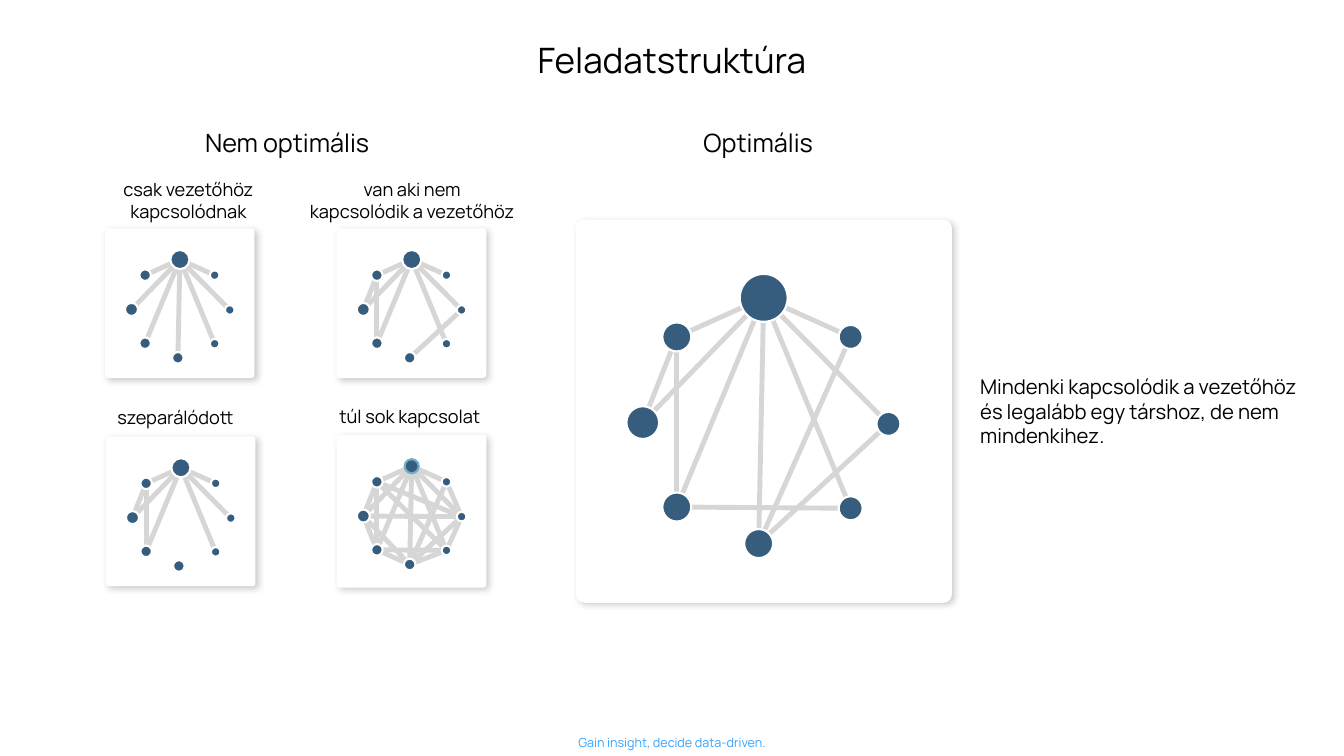
from dataclasses import dataclass

from lxml.etree import SubElement
from pptx import Presentation
from pptx.dml.color import RGBColor
from pptx.enum.shapes import MSO_CONNECTOR, MSO_SHAPE
from pptx.enum.text import MSO_ANCHOR, MSO_AUTO_SIZE, PP_ALIGN
from pptx.oxml.ns import qn
from pptx.util import Inches, Pt

FONT = "Manrope"
WHITE, BLACK, NAVY = "FFFFFF", "000000", "375D7E"
TEAL, GREY, SKY = "6FAEC4", "D6D6D6", "33A3FF"


@dataclass(frozen=True)
class Member:
    x: float
    y: float
    size: float


@dataclass(frozen=True)
class Network:
    left: float
    top: float
    width: float
    height: float
    links: list[tuple[str, str]]
    scale: float = 1
    leader_size: float = 0.38
    leader_outline: str = WHITE


@dataclass(frozen=True)
class Caption:
    text: str
    left: float
    top: float
    width: float
    height: float
    size: float = 26
    color: str = BLACK
    align: PP_ALIGN = PP_ALIGN.CENTER
    margin: float = 0.08
    wrap: bool = False
    anchor: MSO_ANCHOR = MSO_ANCHOR.MIDDLE


# Member centres, measured from the corner of a small card
TEAM = {
    "leader": Member(1.49, 0.62, 0.38),
    "upper left": Member(0.8, 0.93, 0.23),
    "left": Member(0.53, 1.61, 0.26),
    "lower left": Member(0.8, 2.28, 0.23),
    "upper right": Member(2.18, 0.93, 0.19),
    "right": Member(2.48, 1.62, 0.19),
    "lower right": Member(2.18, 2.29, 0.19),
    "bottom": Member(1.45, 2.57, 0.23),
}


def leader_links(*left_out: str) -> list[tuple[str, str]]:
    return [("leader", name) for name in TEAM if name not in ("leader", *left_out)]


# Who is linked to whom
LEFT_PAIRS = [("upper left", "left"), ("upper left", "lower left")]
RIGHT_BOTTOM = [("right", "bottom")]
BALANCED = leader_links() + LEFT_PAIRS + RIGHT_BOTTOM + [
    ("upper right", "bottom"), ("lower left", "lower right")]
CROWDED = BALANCED + [
    ("bottom", "lower left"), ("bottom", "lower right"), ("bottom", "left"),
    ("right", "upper left"), ("right", "upper right"), ("right", "left"),
    ("right", "lower right"), ("lower right", "upper left"), ("left", "lower left")]

NETWORKS = [
    Network(6.68, 8.63, 2.97, 3.03, CROWDED, leader_size=0.28, leader_outline=TEAL),
    Network(2.08, 4.53, 2.97, 2.97, leader_links()),
    Network(6.68, 4.53, 2.97, 2.97, leader_links("bottom") + LEFT_PAIRS + RIGHT_BOTTOM),
    Network(2.1, 8.66, 2.97, 2.97, leader_links("bottom") + LEFT_PAIRS),
    Network(11.43, 4.36, 7.46, 7.6, BALANCED, scale=2.5),
]

TITLE = Caption("Feladatstruktúra", 10.39, 0.69, 5.89, 1.14, 50, anchor=MSO_ANCHOR.TOP)
CAPTIONS = [
    Caption("Nem optimális", 4.01, 2.42, 3.73, 0.82, 36, align=PP_ALIGN.LEFT, margin=0.06),
    Caption("Optimális", 13.9, 2.42, 2.51, 0.82, 36, align=PP_ALIGN.LEFT, margin=0.06),
    Caption("csak vezetőhöz\nkapcsolódnak", 2.29, 3.37, 2.9, 1.2),
    Caption("van aki nem\nkapcsolódik a vezetőhöz", 5.91, 3.37, 4.54, 1.2),
    Caption("szeparálódott", 2.25, 7.94, 2.67, 0.66, align=PP_ALIGN.LEFT),
    Caption("túl sok kapcsolat", 6.55, 7.92, 3.17, 0.66),
    Caption("Mindenki kapcsolódik a vezetőhöz és legalább egy társhoz, de nem mindenkihez.",
            19.37, 7.2, 6.88, 1.91, 29, align=PP_ALIGN.LEFT, wrap=True),
    Caption("Gain insight, decide data-driven.", 11.27, 14.48, 4.13, 0.51, 18, SKY),
]


def rgb(color: str) -> RGBColor:
    return RGBColor.from_string(color)


def fill_shape(shape, color: str) -> None:
    shape.shadow.inherit = False
    shape.fill.solid()
    shape.fill.fore_color.rgb = rgb(color)


def write_caption(shape, caption: Caption) -> None:
    shape.left, shape.top = Inches(caption.left), Inches(caption.top)
    shape.width, shape.height = Inches(caption.width), Inches(caption.height)
    frame = shape.text_frame
    frame.text = caption.text
    margin = Inches(caption.margin)
    frame_format = {
        "margin_left": margin, "margin_right": margin,
        "margin_top": margin, "margin_bottom": margin,
        "auto_size": MSO_AUTO_SIZE.NONE,
        "word_wrap": caption.wrap, "vertical_anchor": caption.anchor,
    }
    for key, value in frame_format.items():
        setattr(frame, key, value)
    for paragraph in frame.paragraphs:
        paragraph.alignment = caption.align
        for run in paragraph.runs:
            run.font.name, run.font.size = FONT, Pt(caption.size)
            run.font.color.rgb = rgb(caption.color)


def draw_card(slide, network: Network) -> None:
    card = slide.shapes.add_shape(
        MSO_SHAPE.ROUNDED_RECTANGLE, Inches(network.left), Inches(network.top),
        Inches(network.width), Inches(network.height))
    card.adjustments[0] = 0.022
    fill_shape(card, WHITE)
    card.line.fill.background()
    # Soft shadow towards the lower right
    effects = card._element.spPr.find(qn("a:effectLst"))
    shadow = SubElement(effects, qn("a:outerShdw"), blurRad=str(Pt(10)),
                        dist=str(Pt(4.9)), dir=str(40 * 60000), rotWithShape="0")
    tint = SubElement(shadow, qn("a:srgbClr"), val=BLACK)
    SubElement(tint, qn("a:alpha"), val="20000")


def draw_network(slide, network: Network) -> None:
    draw_card(slide, network)
    centres = {name: (network.left + member.x * network.scale,
                      network.top + member.y * network.scale)
               for name, member in TEAM.items()}

    # Links lie under the members
    for start, end in network.links:
        link = slide.shapes.add_connector(
            MSO_CONNECTOR.STRAIGHT, *map(Inches, centres[start] + centres[end]))
        link.line.color.rgb = rgb(GREY)
        link.line.width = Pt(7)
        SubElement(link._element.spPr, qn("a:effectLst"))

    for name, (x, y) in centres.items():
        is_leader = name == "leader"
        size = (network.leader_size if is_leader else TEAM[name].size) * network.scale
        dot = slide.shapes.add_shape(
            MSO_SHAPE.OVAL, Inches(x - size / 2), Inches(y - size / 2),
            Inches(size), Inches(size))
        fill_shape(dot, NAVY)
        dot.line.color.rgb = rgb(network.leader_outline if is_leader else WHITE)
        dot.line.width = Pt(3)


def main() -> None:
    presentation = Presentation()
    presentation.slide_width, presentation.slide_height = Inches(26.67), Inches(15)
    slide = presentation.slides.add_slide(presentation.slide_layouts[5])
    write_caption(slide.shapes.title, TITLE)
    for network in NETWORKS:
        draw_network(slide, network)
    for caption in CAPTIONS:
        write_caption(slide.shapes.add_textbox(0, 0, 0, 0), caption)
    presentation.save("out.pptx")


if __name__ == "__main__":
    main()
